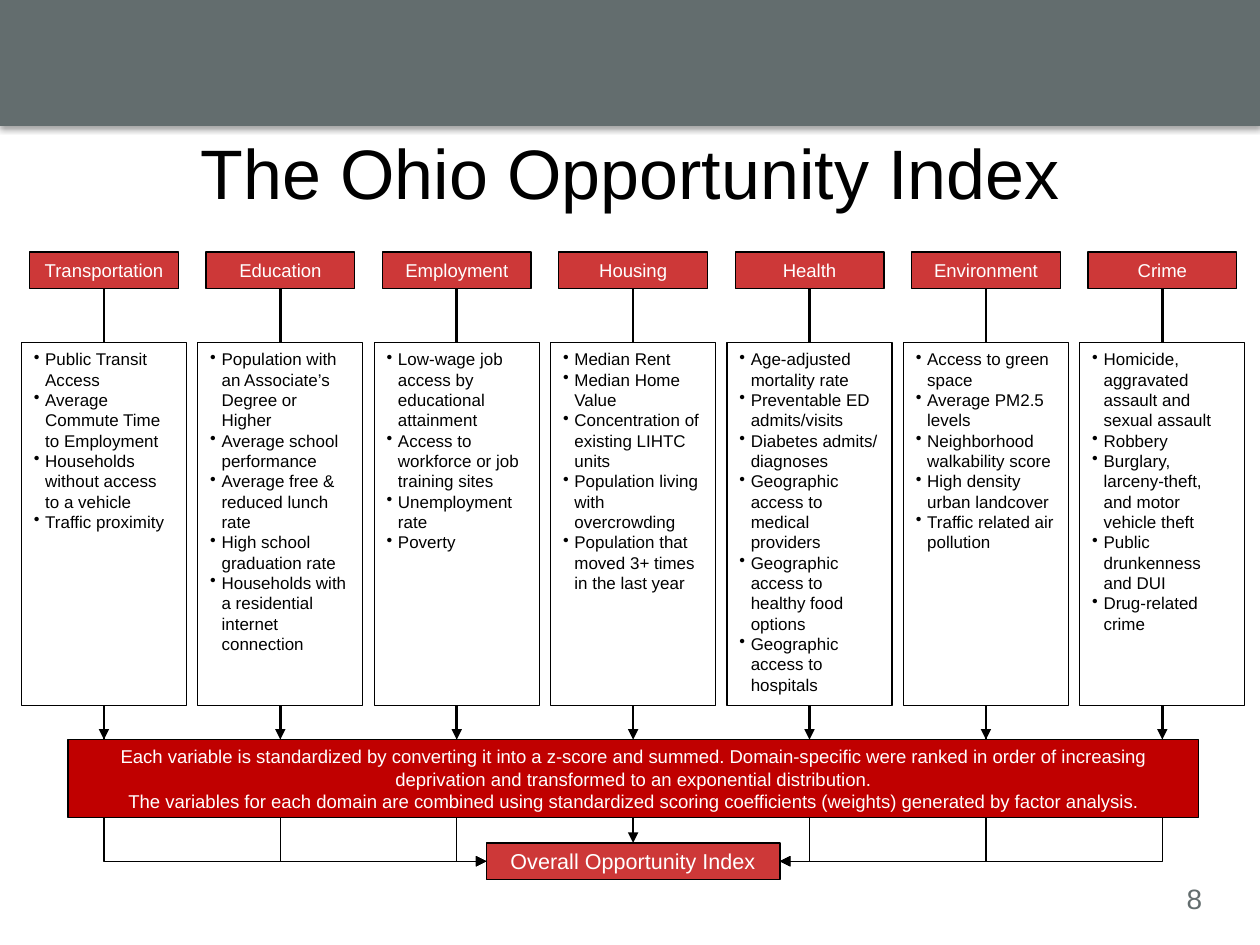
from lxml import etree
from pptx import Presentation
from pptx import util as u
from pptx.dml.color import RGBColor
from pptx.enum import shapes, text
from pptx.oxml import parse_xml
from pptx.oxml.ns import nsdecls, qn

FONT = "Arial"
BLACK, WHITE, RED, GRAY = "000000", "FFFFFF", "C00000", "636D6E"
HEADER_TOP, PANEL_TOP, BAR_TOP = 2.0, 2.72, 5.87
HEADER_SIZE, PANEL_SIZE = (1.18, 0.29), (1.31, 2.88)
FIRST_LEFT, PITCH = 0.17, 1.4
INDEX_BOX = (3.86, 6.69, 2.33, 0.29)

DOMAINS = [
    ("Transportation", ["Public Transit Access", "Average Commute Time to Employment",
                        "Households without access to a vehicle", "Traffic proximity"]),
    ("Education", ["Population with an Associate’s Degree or Higher",
                   "Average school performance", "Average free & reduced lunch rate",
                   "High school graduation rate",
                   "Households with a residential internet connection"]),
    ("Employment", ["Low-wage job access by educational attainment",
                    "Access to workforce or job training sites",
                    "Unemployment rate", "Poverty"]),
    ("Housing", ["Median Rent", "Median Home Value",
                 "Concentration of existing LIHTC units",
                 "Population living with overcrowding",
                 "Population that moved 3+ times in the last year"]),
    ("Health", ["Age-adjusted mortality rate", "Preventable ED admits/visits",
                "Diabetes admits/ diagnoses", "Geographic access to medical providers",
                "Geographic access to healthy food options",
                "Geographic access to hospitals"]),
    ("Environment", ["Access to green space", "Average PM2.5 levels",
                     "Neighborhood walkability score", "High density urban landcover",
                     "Traffic related air pollution"]),
    ("Crime", ["Homicide, aggravated assault and sexual assault", "Robbery",
               "Burglary, larceny-theft, and motor vehicle theft",
               "Public drunkenness and DUI", "Drug-related crime"]),
]
BAR_TEXT = [
    "Each variable is standardized by converting it into a z-score and summed. "
    "Domain-specific were ranked in order of increasing deprivation and transformed "
    "to an exponential distribution.",
    "The variables for each domain are combined using standardized scoring "
    "coefficients (weights) generated by factor analysis.",
]


def color(value):
    return RGBColor.from_string(value)


def inches(values):
    return [u.Inches(value) for value in values]


def write(shape, lines, size, ink, align=text.PP_ALIGN.LEFT, bullet=False):
    frame = shape.text_frame
    for number, line in enumerate(lines):
        paragraph = frame.add_paragraph() if number else frame.paragraphs[0]
        paragraph.text = line
        paragraph.alignment = align
        if bullet:
            properties = paragraph._p.get_or_add_pPr()
            properties.set("marL", str(u.Inches(0.09)))
            properties.set("indent", str(u.Inches(-0.09)))
            etree.SubElement(properties, qn("a:buChar"), char="•")
        paragraph.font.name = FONT
        paragraph.font.size = u.Pt(size)
        paragraph.font.color.rgb = color(ink)


def add_box(slide, box, fill, kind=shapes.MSO_SHAPE.FLOWCHART_PROCESS, opacity=None):
    shape = slide.shapes.add_shape(kind, *inches(box))
    shape.shadow.inherit = False
    shape.fill.solid()
    shape.fill.fore_color.rgb = color(fill)
    if opacity:
        fill_color = shape.fill._xPr.find(qn("a:solidFill"))[0]
        etree.SubElement(fill_color, qn("a:alpha"), val=str(opacity * 1000))
    shape.line.color.rgb = color(BLACK)
    shape.line.width = u.Pt(0.75)
    shape.text_frame.word_wrap = True
    return shape


def add_label(slide, box, lines, size, opacity=None):
    label = add_box(slide, box, RED, opacity=opacity)
    frame = label.text_frame
    frame.margin_left = frame.margin_right = u.Inches(0.09)
    frame.margin_top = frame.margin_bottom = u.Inches(0.04)
    frame.vertical_anchor = text.MSO_ANCHOR.MIDDLE
    write(label, lines, size, WHITE, text.PP_ALIGN.CENTER)


def add_arrow(slide, start, end, width, kind=shapes.MSO_CONNECTOR.STRAIGHT):
    arrow = slide.shapes.add_connector(kind, *inches(start + end))
    arrow.line.color.rgb = color(BLACK)
    arrow.line.width = u.Pt(width)
    etree.SubElement(arrow.line._get_or_add_ln(), qn("a:tailEnd"), type="triangle")
    etree.SubElement(arrow._element.spPr, qn("a:effectLst"))
    if kind == shapes.MSO_CONNECTOR.ELBOW:
        # Turn at the start, so the line runs straight down and then sideways
        guides = arrow._element.spPr.find(qn("a:prstGeom")).get_or_add_avLst()
        etree.SubElement(guides, qn("a:gd"), name="adj1", fmla="val 0")


def add_top_band(slide, box):
    band = add_box(slide, box, GRAY, shapes.MSO_SHAPE.RECTANGLE)
    band.line.fill.background()
    band._element.spPr.find(qn("a:effectLst")).append(parse_xml(
        f'<a:outerShdw {nsdecls("a")} blurRad="{u.Pt(3.1)}" dist="{u.Pt(1.8)}" '
        'dir="5400000" rotWithShape="0"><a:srgbClr val="000000">'
        '<a:alpha val="35000"/></a:srgbClr></a:outerShdw>'))


def add_title(slide, box):
    title = slide.shapes.add_textbox(*inches(box))
    title.text_frame.word_wrap = True
    title.text_frame.margin_top = u.Inches(0.1)
    write(title, ["The Ohio Opportunity Index"], 40, BLACK, text.PP_ALIGN.CENTER)


def add_page_number(slide, box):
    number = slide.shapes.add_textbox(*inches(box))
    write(number, ["8"], 16, GRAY)


def add_index_arrow(slide, center, box):
    """Lead one domain from its panel to the overall index box."""
    left, top, width, height = box
    middle = left + width / 2
    if abs(center - middle) < 0.1:
        add_arrow(slide, (middle, 6.49), (middle, top), 0.75)
    else:
        side = left if center < middle else left + width
        add_arrow(slide, (center, PANEL_TOP + PANEL_SIZE[1]), (side, top + height / 2),
                  0.75, shapes.MSO_CONNECTOR.ELBOW)


def add_domain(slide, left, name, variables):
    """Header, arrow to the bar, and the list panel over the arrow."""
    center = left + PANEL_SIZE[0] / 2
    header_bottom = HEADER_TOP + HEADER_SIZE[1]
    add_arrow(slide, (center, header_bottom), (center, BAR_TOP), 1.5)
    add_label(slide, (center - HEADER_SIZE[0] / 2, HEADER_TOP, *HEADER_SIZE),
              [name], 10.6, opacity=78)
    panel = add_box(slide, (left, PANEL_TOP, *PANEL_SIZE), WHITE,
                    shapes.MSO_SHAPE.RECTANGLE)
    panel.text_frame.vertical_anchor = text.MSO_ANCHOR.TOP
    write(panel, variables, 9.7, BLACK, bullet=True)


def main():
    presentation = Presentation()
    presentation.slide_width, presentation.slide_height = inches((10, 7.5))
    slide = presentation.slides.add_slide(presentation.slide_layouts[6])

    add_top_band(slide, (0, 0, 10, 1))
    add_page_number(slide, (9.32, 6.95, 0.48, 0.37))
    add_title(slide, (0.5, 0.93, 9, 0.62))

    # Seven domains, with the index arrows behind them
    lefts = [FIRST_LEFT + PITCH * column for column in range(len(DOMAINS))]
    for left in lefts:
        add_index_arrow(slide, left + PANEL_SIZE[0] / 2, INDEX_BOX)
    for left, (name, variables) in zip(lefts, DOMAINS):
        add_domain(slide, left, name, variables)

    # Scoring method and result
    add_label(slide, (0.54, BAR_TOP, 8.97, 0.62), BAR_TEXT, 10.6)
    add_label(slide, INDEX_BOX, ["Overall Opportunity Index"], 12.3, opacity=78)

    presentation.save("out.pptx")


if __name__ == "__main__":
    main()
